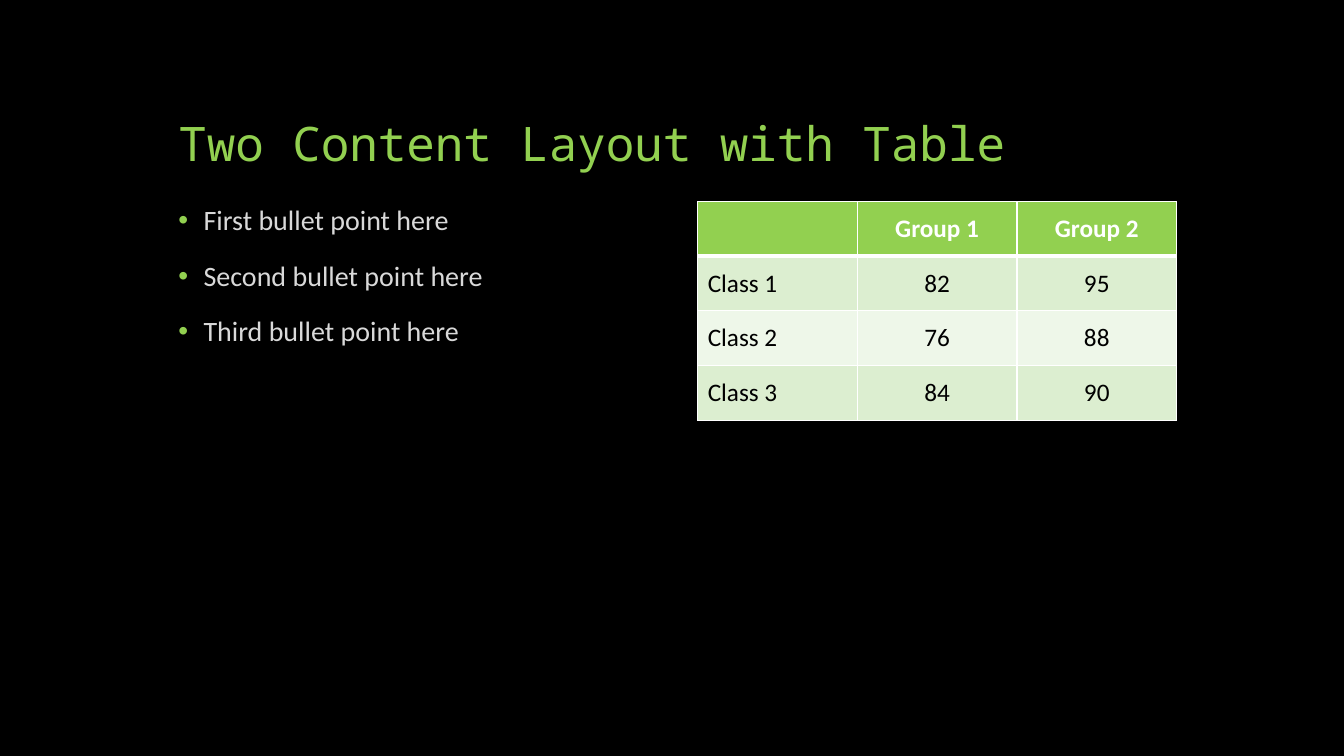
from dataclasses import dataclass

from lxml import etree
from pptx import Presentation
from pptx.dml.color import RGBColor
from pptx.enum.text import MSO_ANCHOR, PP_ALIGN
from pptx.oxml.ns import qn
from pptx.util import Inches, Pt

BOTTOM, MIDDLE, TOP = MSO_ANCHOR.BOTTOM, MSO_ANCHOR.MIDDLE, MSO_ANCHOR.TOP
LEFT, CENTER = PP_ALIGN.LEFT, PP_ALIGN.CENTER


@dataclass(frozen=True)
class Theme:
    background: str = "000000"
    accent: str = "92D050"
    body_text: str = "D9D9D9"
    header_text: str = "FFFFFF"
    cell_text: str = "000000"
    border: str = "FFFFFF"
    bands: tuple = ("DCEED0", "EEF7E9")
    title_font: str = "Noto Sans Mono"
    body_font: str = "Calibri"
    title_size: int = 34
    body_size: int = 20
    table_size: int = 18
    thin: int = 1
    thick: int = 3


def apply_format(target, values):
    for name, value in values.items():
        setattr(target, name, value)


def add_color(parent, color):
    etree.SubElement(parent, qn("a:srgbClr"), val=color)


class SlideBuilder:
    def __init__(self, slide, theme):
        self.slide = slide
        self.theme = theme
        background = slide.background.fill
        background.solid()
        background.fore_color.rgb = RGBColor.from_string(theme.background)

    def add_text(self, paragraph, text, color, font_format, paragraph_format):
        apply_format(paragraph, paragraph_format)
        run = paragraph.add_run()
        run.text = text
        apply_format(run.font, font_format)
        run.font.color.rgb = RGBColor.from_string(color)

    def text_frame(self, box, anchor):
        frame = self.slide.shapes.add_textbox(*map(Inches, box)).text_frame
        apply_format(frame, {"word_wrap": True, "vertical_anchor": anchor})
        return frame

    def title(self, text, box):
        theme = self.theme
        frame = self.text_frame(box, BOTTOM)
        font_format = {"name": theme.title_font, "size": Pt(theme.title_size)}
        self.add_text(frame.paragraphs[0], text, theme.accent, font_format, {"line_spacing": 0.9})

    def bullets(self, points, box):
        theme = self.theme
        frame = self.text_frame(box, TOP)
        font_format = {"name": theme.body_font, "size": Pt(theme.body_size)}
        spacing = {"line_spacing": 0.9, "space_before": Pt(18)}
        for index, point in enumerate(points):
            paragraph = frame.add_paragraph() if index else frame.paragraphs[0]
            self.add_text(paragraph, point, theme.body_text, font_format, spacing)
            properties = paragraph._p.get_or_add_pPr()
            properties.set("marL", str(Inches(0.25)))
            properties.set("indent", str(-Inches(0.25)))
            add_color(etree.SubElement(properties, qn("a:buClr")), theme.accent)
            etree.SubElement(properties, qn("a:buFont"), typeface="Arial")
            etree.SubElement(properties, qn("a:buChar"), char="•")

    def borders(self, cell, widths):
        properties = cell._tc.get_or_add_tcPr()
        for index, (side, width) in enumerate(widths.items()):
            line = etree.Element(qn(f"a:ln{side}"), w=str(Pt(width)))
            add_color(etree.SubElement(line, qn("a:solidFill")), self.theme.border)
            properties.insert(index, line)

    def table(self, records, box):
        theme = self.theme
        shape = self.slide.shapes.add_table(len(records), len(records[0]), *map(Inches, box))
        table = shape.table
        for row, record in enumerate(records):
            header = row == 0
            fill = theme.accent if header else theme.bands[(row - 1) % 2]
            color = theme.header_text if header else theme.cell_text
            font_format = {"name": theme.body_font, "size": Pt(theme.table_size), "bold": header}
            widths = {
                "L": theme.thin,
                "R": theme.thin,
                "T": theme.thick if row == 1 else theme.thin,
                "B": theme.thick if header else theme.thin,
            }
            for column, value in enumerate(record):
                cell = table.cell(row, column)
                cell.vertical_anchor = MIDDLE
                cell.fill.solid()
                cell.fill.fore_color.rgb = RGBColor.from_string(fill)
                self.borders(cell, widths)
                if value:
                    alignment = {"alignment": CENTER if column else LEFT}
                    self.add_text(cell.text_frame.paragraphs[0], value, color, font_format, alignment)


def main():
    presentation = Presentation()
    size = {"slide_width": Inches(13.33), "slide_height": Inches(7.5)}
    apply_format(presentation, size)
    slide = presentation.slides.add_slide(presentation.slide_layouts[6])
    builder = SlideBuilder(slide, Theme())
    builder.title("Two Content Layout with Table", (1.67, 0.5, 10, 1.25))
    builder.bullets(
        ["First bullet point here", "Second bullet point here", "Third bullet point here"],
        (1.67, 2, 4.75, 4.67),
    )
    scores = [
        ("", "Group 1", "Group 2"),
        ("Class 1", "82", "95"),
        ("Class 2", "76", "88"),
        ("Class 3", "84", "90"),
    ]
    builder.table(scores, (6.92, 2, 4.75, 2.17))
    presentation.save("out.pptx")


if __name__ == "__main__":
    main()
